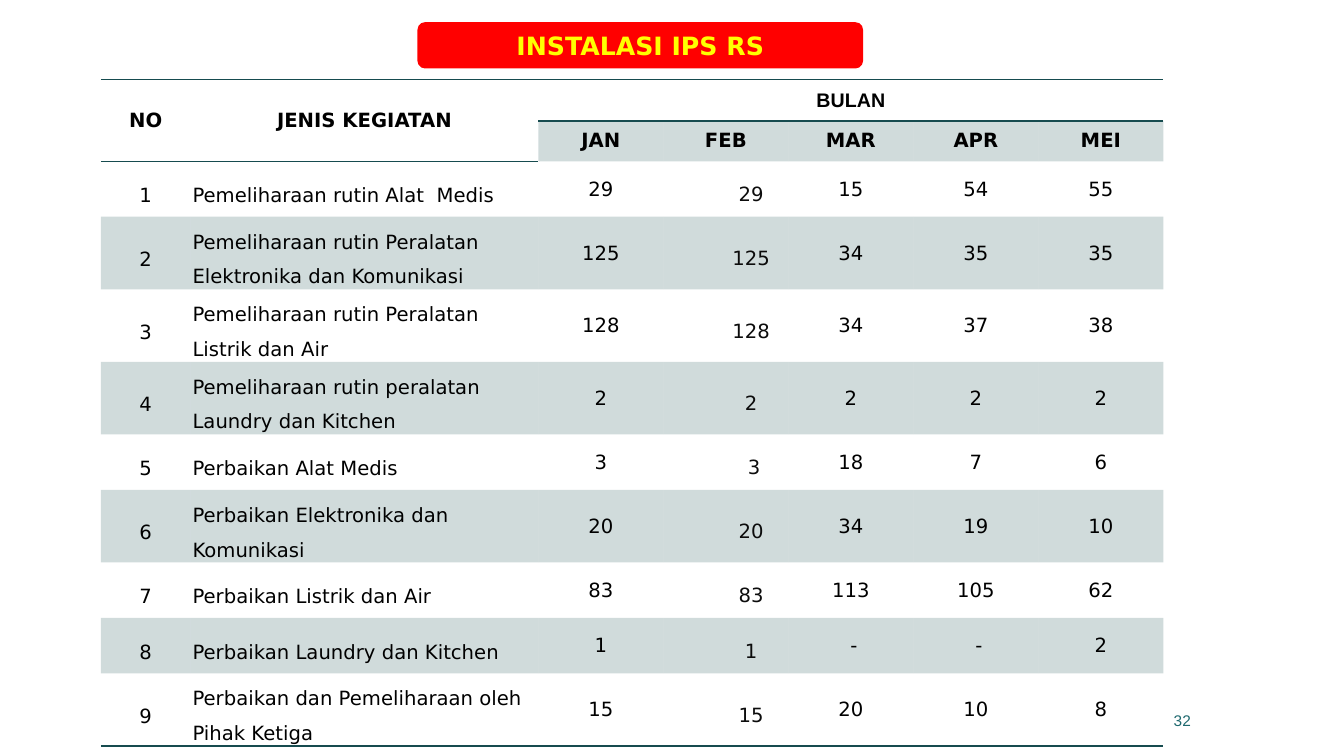
"""Builds the monthly activity table slide of the hospital maintenance unit."""
from lxml import etree
from pptx import Presentation
from pptx.dml.color import RGBColor
from pptx.enum.shapes import MSO_SHAPE
from pptx.enum.text import MSO_ANCHOR, PP_ALIGN
from pptx.oxml.ns import qn
from pptx.util import Inches, Pt

ROUNDED = MSO_SHAPE.ROUNDED_RECTANGLE
MIDDLE = MSO_ANCHOR.MIDDLE
LEFT, CENTER, RIGHT = PP_ALIGN.LEFT, PP_ALIGN.CENTER, PP_ALIGN.RIGHT
COLORS = {"teal": "164B4F", "page": "1F696F", "red": "FF0000",
          "yellow": "FFFF00", "black": "000000", "soft": "0C0C0C"}
SANS = "DejaVu Sans"
NO_STYLE = "{2D5ABB26-0587-4C30-8999-92F81FD0307C}"

MONTHS = ["JAN", "FEB", "MAR", "APR", "MEI"]
ACTIVITIES = [
    ("Pemeliharaan rutin Alat  Medis", "29", "29", "15", "54", "55"),
    ("Pemeliharaan rutin Peralatan Elektronika dan Komunikasi", "125", "125", "34", "35", "35"),
    ("Pemeliharaan rutin Peralatan Listrik dan Air", "128", "128", "34", "37", "38"),
    ("Pemeliharaan rutin peralatan Laundry dan Kitchen", "2", "2", "2", "2", "2"),
    ("Perbaikan Alat Medis", "3", " 3", "18", "7", "6"),
    ("Perbaikan Elektronika dan Komunikasi", "20", "20", "34", "19", "10"),
    ("Perbaikan Listrik dan Air", "83", "83", "113", "105", "62"),
    ("Perbaikan Laundry dan Kitchen", "1", "1", " -", " -", "2"),
    ("Perbaikan dan Pemeliharaan oleh Pihak Ketiga", "15", "15", "20", "10", "8"),
]


def write(frame, text, size, color, align=CENTER, bold=False, font=SANS):
    """Put one formatted paragraph into a text frame and return it."""
    frame.text = text
    paragraph = frame.paragraphs[0]
    paragraph.alignment = align
    for run in paragraph.runs:
        run.font.size = Pt(size)
        run.font.name = font
        run.font.bold = bold
        run.font.color.rgb = RGBColor.from_string(COLORS[color])
    return paragraph


def rule(cell, edge):
    """Draw a thin teal line on one edge of a cell."""
    line = etree.Element(qn(f"a:{edge}"), w=str(Pt(1)))
    fill = etree.SubElement(line, qn("a:solidFill"))
    etree.SubElement(fill, qn("a:srgbClr"), val=COLORS["teal"])
    cell._tc.get_or_add_tcPr().insert(0, line)


prs = Presentation()
prs.slide_width, prs.slide_height = Inches(13.33), Inches(7.5)
slide = prs.slides.add_slide(prs.slide_layouts[6])

page_number = slide.shapes.add_textbox(Inches(8.8), Inches(6.95), Inches(3.11), Inches(0.4))
page_number.text_frame.word_wrap = True
page_number.text_frame.vertical_anchor = MIDDLE
write(page_number.text_frame, "32", 11, "page", RIGHT, font="Arial")

rows = [["NO", "JENIS KEGIATAN", "BULAN", "", "", "", ""], ["", "", *MONTHS]]
rows += [[str(number), *activity] for number, activity in enumerate(ACTIVITIES, 1)]
widths = [0.89, 3.45] + [1.24] * len(MONTHS)
heights = [0.41, 0.4] + [0.55] * len(ACTIVITIES)

table_frame = slide.shapes.add_table(len(rows), len(widths), Inches(1), Inches(0.79),
                                     Inches(sum(widths)), Inches(sum(heights)))
activity_table = table_frame.table
activity_table.first_row = activity_table.horz_banding = False
activity_table._tbl.tblPr.find(qn("a:tableStyleId")).text = NO_STYLE
for column, width in zip(activity_table.columns, widths):
    column.width = Inches(width)
for row, height in zip(activity_table.rows, heights):
    row.height = Inches(height)

for r, texts in enumerate(rows):
    for c, text in enumerate(texts):
        cell = activity_table.cell(r, c)
        header, february = r < 2, c == 3
        if header:
            margins = (0.2, 0.08, 0.2, 0.08)
        elif c < 2:
            margins = (0.02, 0.02, 0.02, 0)
        elif february:
            margins = (0.07, 0, 0.07, 0)
        else:
            margins = (0.01, 0.01, 0.01, 0)
        (cell.margin_left, cell.margin_top,
         cell.margin_right, cell.margin_bottom) = map(Inches, margins)
        cell.vertical_anchor = MIDDLE

        if text:
            paragraph = write(cell.text_frame, text, 14,
                              "soft" if february and not header else "black",
                              LEFT if c == 1 and not header else CENTER,
                              header, "Arial" if text == "BULAN" else SANS)
            if not header and c in (0, 1, 3):
                paragraph.line_spacing = 1.5
            if not header and february:
                margin = paragraph._p.get_or_add_pPr()
                margin.set("marL", str(Inches(0.5)))
                margin.set("indent", "0")

        if r % 2 and (c > 1 or not header):
            cell.fill.solid()
            cell.fill.fore_color.rgb = RGBColor.from_string(COLORS["teal"])
            tint = cell._tc.tcPr.find(f"{qn('a:solidFill')}/{qn('a:srgbClr')}")
            etree.SubElement(tint, qn("a:alpha"), val="20000")
        else:
            cell.fill.background()

        if r in (0, len(rows) - 1) or (r == 1 and c < 2):
            rule(cell, "lnB")
        if r == 0:
            rule(cell, "lnT")

for first, last in [((0, 0), (1, 0)), ((0, 1), (1, 1)), ((0, 2), (0, 6))]:
    activity_table.cell(*first).merge(activity_table.cell(*last))

title = slide.shapes.add_shape(ROUNDED, Inches(4.14), Inches(0.22), Inches(4.42), Inches(0.46))
title.shadow.inherit = False
title.fill.solid()
title.fill.fore_color.rgb = RGBColor.from_string(COLORS["red"])
title.line.fill.background()
title.text_frame.vertical_anchor = MIDDLE
write(title.text_frame, "INSTALASI IPS RS", 18, "yellow", bold=True)

prs.save("out.pptx")
